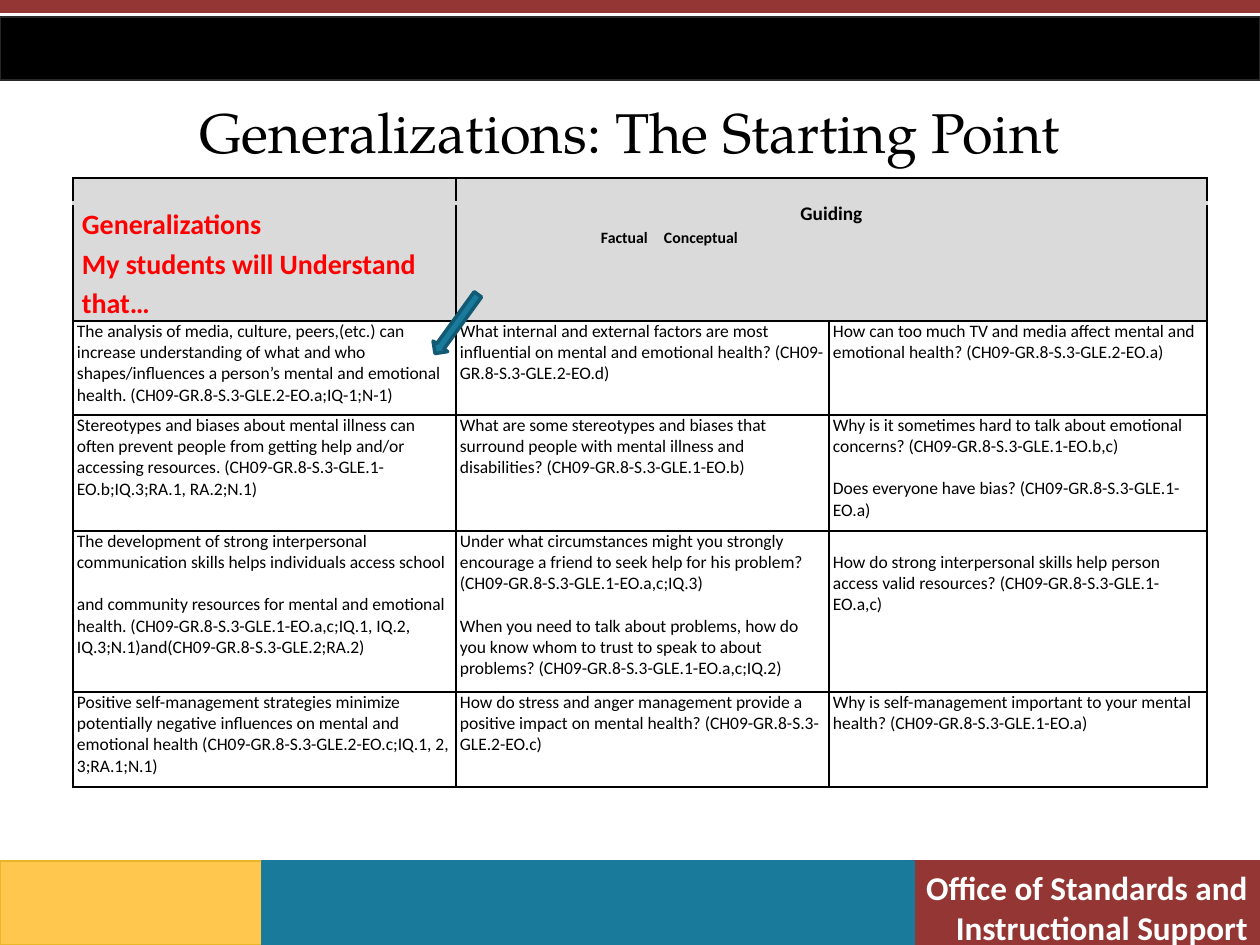
import pptx
import pptx.dml.color
import pptx.enum.shapes
import pptx.enum.text
import pptx.util
from lxml import etree
from pptx.oxml.ns import qn

ALIGN = pptx.enum.text.PP_ALIGN
SHAPE = pptx.enum.shapes.MSO_SHAPE


class Theme:
    heading_font, body_font = "TeX Gyre Pagella", "Calibri"
    maroon, gold, gold_edge = "943634", "FFC74E", "EAB629"
    teal, teal_edge = "197A9B", "125A73"
    black, black_edge, white = "000000", "272727", "FFFFFF"
    header_fill, emphasis = "DADADA", "FF0000"
    title_size, footer_size, lead_size = 32, 19, 16
    guiding_size, label_size, body_size = 11, 9, 10


COLUMNS = [383, 373, 378]
ROWS = [25, 118, 94, 116, 161, 95]
LINE_GAP = 21

# Each cell is a list of blocks; blocks are set one line apart
BODY = [
    [
        ["The analysis of media, culture, peers,(etc.) can\n"
         "increase understanding of what and who\n"
         "shapes/influences a person’s mental and emotional\n"
         "health. (CH09-GR.8-S.3-GLE.2-EO.a;IQ-1;N-1)"],
        ["What internal and external factors are most\n"
         "influential on mental and emotional health? (CH09-\n"
         "GR.8-S.3-GLE.2-EO.d)"],
        ["How can too much TV and media affect mental and\n"
         "emotional health? (CH09-GR.8-S.3-GLE.2-EO.a)"],
    ],
    [
        ["Stereotypes and biases about mental illness can\n"
         "often prevent people from getting help and/or\n"
         "accessing resources. (CH09-GR.8-S.3-GLE.1-\n"
         "EO.b;IQ.3;RA.1, RA.2;N.1)"],
        ["What are some stereotypes and biases that\n"
         "surround people with mental illness and\n"
         "disabilities? (CH09-GR.8-S.3-GLE.1-EO.b)"],
        ["Why is it sometimes hard to talk about emotional\n"
         "concerns? (CH09-GR.8-S.3-GLE.1-EO.b,c)",
         "Does everyone have bias? (CH09-GR.8-S.3-GLE.1-\n"
         "EO.a)"],
    ],
    [
        ["The development of strong interpersonal\n"
         "communication skills helps individuals access school",
         "and community resources for mental and emotional\n"
         "health. (CH09-GR.8-S.3-GLE.1-EO.a,c;IQ.1, IQ.2,\n"
         "IQ.3;N.1)and(CH09-GR.8-S.3-GLE.2;RA.2)"],
        ["Under what circumstances might you strongly\n"
         "encourage a friend to seek help for his problem?\n"
         "(CH09-GR.8-S.3-GLE.1-EO.a,c;IQ.3)",
         "When you need to talk about problems, how do\n"
         "you know whom to trust to speak to about\n"
         "problems? (CH09-GR.8-S.3-GLE.1-EO.a,c;IQ.2)"],
        ["How do strong interpersonal skills help person\n"
         "access valid resources? (CH09-GR.8-S.3-GLE.1-\n"
         "EO.a,c)"],
    ],
    [
        ["Positive self-management strategies minimize\n"
         "potentially negative influences on mental and\n"
         "emotional health (CH09-GR.8-S.3-GLE.2-EO.c;IQ.1, 2,\n"
         "3;RA.1;N.1)"],
        ["How do stress and anger management provide a\n"
         "positive impact on mental health? (CH09-GR.8-S.3-\n"
         "GLE.2-EO.c)"],
        ["Why is self-management important to your mental\n"
         "health? (CH09-GR.8-S.3-GLE.1-EO.a)"],
    ],
]


def px(length):
    return pptx.util.Emu(round(length * 914400 / 126))


def rgb(color):
    return pptx.dml.color.RGBColor.from_string(color)


def style(paragraph, size, color, bold=False, font=Theme.body_font, align=ALIGN.LEFT):
    paragraph.alignment = align
    paragraph.font.name = font
    paragraph.font.size = pptx.util.Pt(size)
    paragraph.font.bold = bold
    paragraph.font.color.rgb = rgb(color)


def write_lines(frame, lines):
    """Put one line in each paragraph and return the paragraphs."""
    frame.text = "\n".join(lines)
    return frame.paragraphs


def add_block(slide, kind, box, fill, line, width=0.75):
    shape = slide.shapes.add_shape(kind, *map(px, box))
    shape.shadow.inherit = False
    shape.fill.solid()
    shape.fill.fore_color.rgb = rgb(fill)
    shape.line.color.rgb = rgb(line)
    shape.line.width = pptx.util.Pt(width)
    return shape


def add_footer_text(slide, box, lines):
    frame = slide.shapes.add_textbox(*map(px, box)).text_frame
    frame.word_wrap = True
    for paragraph in write_lines(frame, lines):
        style(paragraph, Theme.footer_size, Theme.white, True, align=ALIGN.RIGHT)


def set_title(slide, text):
    title = slide.shapes.title
    title.left, title.top, title.width, title.height = map(px, (63, 63, 1134, 136))
    title.text_frame.vertical_anchor = pptx.enum.text.MSO_ANCHOR.MIDDLE
    title.text_frame.text = text
    style(title.text_frame.paragraphs[0], Theme.title_size, Theme.black,
          font=Theme.heading_font, align=ALIGN.CENTER)


def set_borders(cell, **special):
    """Draw thin black edges, except where an edge has its own color and width."""
    properties = cell._tc.get_or_add_tcPr()
    for side in "LRTB":
        color, width = special.get(side, (Theme.black, 1))
        edge = etree.SubElement(properties, qn(f"a:ln{side}"), w=str(pptx.util.Pt(width)))
        fill = etree.SubElement(edge, qn("a:solidFill"))
        etree.SubElement(fill, qn("a:srgbClr"), val=color)


def format_cell(cell, row):
    seam = (Theme.header_fill, 3)
    set_borders(cell, **{0: {"B": seam}, 1: {"T": seam}}.get(row, {}))
    if row < 2:
        cell.fill.solid()
        cell.fill.fore_color.rgb = rgb(Theme.header_fill)
    else:
        cell.fill.background()
    cell.margin_left = px(4)
    cell.margin_right = cell.margin_top = cell.margin_bottom = 0


def fill_header(table):
    # The empty band keeps a small type size so that it stays low
    for cell in table.rows[0].cells:
        paragraph = cell.text_frame.paragraphs[0]
        etree.SubElement(paragraph._p, qn("a:endParaRPr"), sz=str(Theme.body_size * 100))

    lead, guiding = table.cell(1, 0), table.cell(1, 1)
    lead.margin_left = px(9)
    for paragraph in write_lines(lead.text_frame,
                                 ["Generalizations", "My students will Understand that…"]):
        paragraph.line_spacing = 1.15
        style(paragraph, Theme.lead_size, Theme.emphasis, True)

    guiding.margin_left = 0
    heading, labels = write_lines(guiding.text_frame, ["Guiding", "Factual\tConceptual"])
    heading.line_spacing = pptx.util.Pt(13.2)
    style(heading, Theme.guiding_size, Theme.black, True, align=ALIGN.CENTER)
    labels.line_spacing = pptx.util.Pt(12.2)
    properties = labels._p.get_or_add_pPr()
    properties.set("marL", str(px(145)))
    properties.set("indent", "0")
    tabs = etree.SubElement(properties, qn("a:tabLst"))
    etree.SubElement(tabs, qn("a:tab"), pos=str(px(593)), algn="l")
    style(labels, Theme.label_size, Theme.black, True)


def fill_body_cell(cell, blocks):
    lines = [(line, number > 0 and position == 0)
             for number, block in enumerate(blocks)
             for position, line in enumerate(block.split("\n"))]
    paragraphs = write_lines(cell.text_frame, [line for line, _ in lines])
    for paragraph, (_, starts_block) in zip(paragraphs, lines):
        if starts_block:
            paragraph.space_before = px(LINE_GAP)
        style(paragraph, Theme.body_size, Theme.black)


def add_unit_table(slide):
    frame = slide.shapes.add_table(len(ROWS), len(COLUMNS), px(73), px(178),
                                   px(sum(COLUMNS)), px(sum(ROWS)))
    table = frame.table
    table.first_row = table.horz_banding = False
    for column, width in zip(table.columns, COLUMNS):
        column.width = px(width)
    for number, (row, height) in enumerate(zip(table.rows, ROWS)):
        row.height = px(height)
        for cell in row.cells:
            format_cell(cell, number)
    for number in (0, 1):
        table.cell(number, 1).merge(table.cell(number, 2))
    fill_header(table)
    for number, contents in enumerate(BODY, start=2):
        for column, blocks in enumerate(contents):
            fill_body_cell(table.cell(number, column), blocks)
    table.cell(4, 2).margin_top = px(LINE_GAP)


def main():
    presentation = pptx.Presentation()
    presentation.slide_width, presentation.slide_height = px(1260), px(945)
    slide = presentation.slides.add_slide(presentation.slide_layouts[5])

    # Footer and top bands
    for box, fill, line in [
        ((914, 861, 346, 84), Theme.maroon, Theme.maroon),
        ((0, 861, 262, 84), Theme.gold, Theme.gold_edge),
        ((262, 861, 652, 84), Theme.teal, Theme.teal),
        ((0, 0, 1260, 12), Theme.maroon, Theme.maroon),
        ((0, 17, 1260, 63), Theme.black, Theme.black_edge),
    ]:
        add_block(slide, SHAPE.RECTANGLE, box, fill, line)
    add_footer_text(slide, (431, 861, 829, 84),
                    ["Office of Standards and", "Instructional Support"])

    # Title, table and the arrow to the first generalization
    set_title(slide, "Generalizations: The Starting Point")
    add_unit_table(slide)
    arrow = add_block(slide, SHAPE.LEFT_ARROW, (420, 315, 73, 18),
                      Theme.teal, Theme.teal_edge, 2)
    arrow.rotation = 305.9

    presentation.save("out.pptx")


if __name__ == "__main__":
    main()
